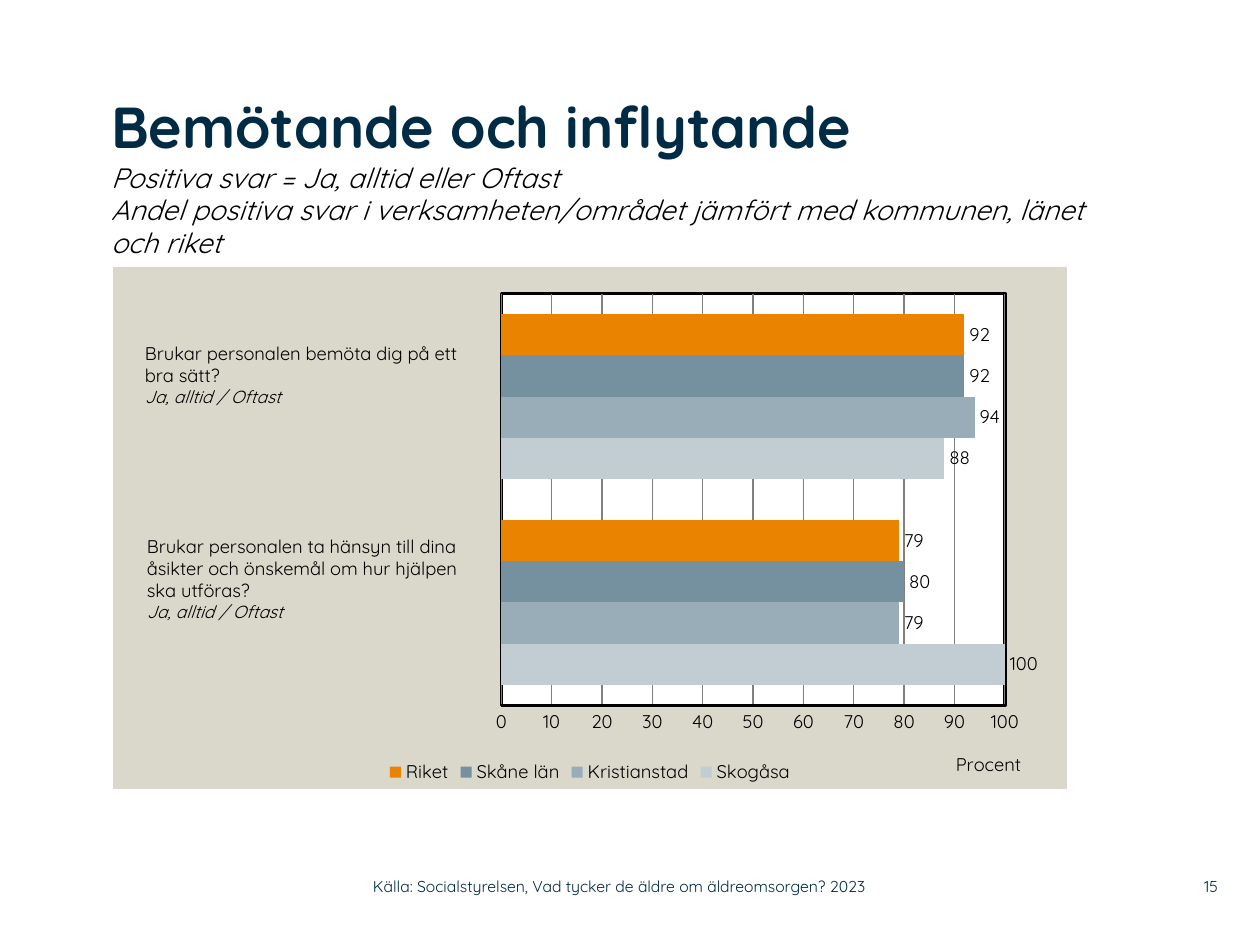
import dataclasses
import typing

import lxml.etree
import pptx
import pptx.chart.data
import pptx.dml.color
import pptx.enum.chart
import pptx.enum.text
import pptx.oxml
import pptx.oxml.ns
import pptx.util

SCALE = 914400 / 126
FONT = "Quicksand"
NAVY, BLACK, WHITE = "002B45", "000000", "FFFFFF"
NS = 'xmlns:c="{}" xmlns:a="{}"'.format(
    pptx.oxml.ns.nsuri("c"), pptx.oxml.ns.nsuri("a"))


@dataclasses.dataclass
class Line:
    text: str
    size: float
    color: str = BLACK
    bold: bool = False
    italic: bool = False


@dataclasses.dataclass
class TextBlock:
    box: tuple[int, int, int, int]
    lines: list[Line]
    inset: tuple[int, int] = (0, 0)
    spacing: float = 1.0
    anchor: typing.Any = pptx.enum.text.MSO_ANCHOR.TOP
    align: typing.Any = pptx.enum.text.PP_ALIGN.LEFT


@dataclasses.dataclass
class Series:
    name: str
    values: tuple[int, int]
    color: str


def px(n: int) -> int:
    return round(n * SCALE)


def rgb(color: str) -> pptx.dml.color.RGBColor:
    return pptx.dml.color.RGBColor.from_string(color)


def set_font(font, size: float, color: str = BLACK,
             bold: bool = False, italic: bool = False) -> None:
    values = {"name": FONT, "size": pptx.util.Pt(size),
              "bold": bold, "italic": italic}
    for key, value in values.items():
        setattr(font, key, value)
    font.color.rgb = rgb(color)


def add_text(s, block: TextBlock) -> None:
    tf = s.shapes.add_textbox(*map(px, block.box)).text_frame
    side, top = map(px, block.inset)
    values = {"word_wrap": True, "vertical_anchor": block.anchor,
              "margin_left": side, "margin_right": side,
              "margin_top": top, "margin_bottom": top}
    for key, value in values.items():
        setattr(tf, key, value)
    for i, line in enumerate(block.lines):
        p = tf.add_paragraph() if i else tf.paragraphs[0]
        p.alignment = block.align
        p.line_spacing = block.spacing
        r = p.add_run()
        r.text = line.text
        set_font(r.font, line.size, line.color, line.bold, line.italic)


def shape_format(color: str, line: str) -> lxml.etree._Element:
    return pptx.oxml.parse_xml(
        f'<c:spPr {NS}><a:solidFill><a:srgbClr val="{color}"/></a:solidFill>'
        f'{line}</c:spPr>')


def set_layout(parent, index: int, **values: typing.Any) -> None:
    old = parent.find(pptx.oxml.ns.qn("c:layout"))
    if old is not None:
        parent.remove(old)
    items = "".join(f'<c:{k} val="{v}"/>' for k, v in values.items())
    parent.insert(index, pptx.oxml.parse_xml(
        f"<c:layout {NS}><c:manualLayout>{items}</c:manualLayout></c:layout>"))


def add_bars(s, box: tuple[int, int, int, int], series: list[Series]) -> None:
    data = pptx.chart.data.CategoryChartData()
    data.categories = ["1", "2"]
    for item in series:
        data.add_series(item.name, item.values)
    chart = s.shapes.add_chart(
        pptx.enum.chart.XL_CHART_TYPE.BAR_CLUSTERED, *map(px, box), data).chart
    chart.has_title = False
    set_font(chart.font, 10.5)
    chart.has_legend = True
    chart.legend.position = pptx.enum.chart.XL_LEGEND_POSITION.BOTTOM
    chart.legend.include_in_layout = False
    set_font(chart.legend.font, 10.5)

    plot = chart.plots[0]
    for key, value in {"gap_width": 100, "overlap": 0,
                       "vary_by_categories": False}.items():
        setattr(plot, key, value)
    for bars, item in zip(plot.series, series):
        bars.format.fill.solid()
        bars.format.fill.fore_color.rgb = rgb(item.color)
        labels = bars.data_labels
        labels.show_value = True
        labels.position = pptx.enum.chart.XL_LABEL_POSITION.OUTSIDE_END
        set_font(labels.font, 10.5)

    chart.category_axis.visible = False
    axis = chart.value_axis
    no_tick = pptx.enum.chart.XL_TICK_MARK.NONE
    for key, value in {"minimum_scale": 0, "maximum_scale": 100,
                       "major_unit": 10, "has_major_gridlines": True,
                       "major_tick_mark": no_tick,
                       "minor_tick_mark": no_tick}.items():
        setattr(axis, key, value)
    set_font(axis.tick_labels.font, 10.5)
    for line, color, width in ((axis.format.line, BLACK, 2),
                               (axis.major_gridlines.format.line, "808080", 0.75)):
        line.color.rgb = rgb(color)
        line.width = pptx.util.Pt(width)
    title = axis.axis_title
    p = title.text_frame.paragraphs[0]
    r = p.add_run()
    r.text = "Procent"
    set_font(r.font, 10.5)
    set_layout(title._element, 1, xMode="edge", yMode="edge", x=0.88, y=0.92)

    chart_el = chart._chartSpace.chart
    area = chart_el.plotArea
    set_layout(area, 0, layoutTarget="inner", xMode="edge", yMode="edge",
               x=0.407, y=0.051, w=0.528, h=0.789)
    border = (f'<a:ln w="{pptx.util.Pt(2)}"><a:solidFill>'
              f'<a:srgbClr val="{BLACK}"/></a:solidFill></a:ln>')
    area.append(shape_format(WHITE, border))
    chart_el.addnext(shape_format("DAD7CB", "<a:ln><a:noFill/></a:ln>"))


def question(box: tuple[int, int, int, int], *lines: str) -> TextBlock:
    answer = Line("Ja, alltid / Oftast", 10, italic=True)
    return TextBlock(box, [Line(t, 10.5) for t in lines] + [answer], (13, 6))


def main() -> None:
    prs = pptx.Presentation()
    prs.slide_width, prs.slide_height = px(1260), px(945)
    s = prs.slides.add_slide(prs.slide_layouts[6])
    add_bars(s, (113, 267, 954, 522), [
        Series("Skogåsa", (100, 88), "C2CDD3"),
        Series("Kristianstad", (79, 94), "99ADB9"),
        Series("Skåne län", (80, 92), "75909F"),
        Series("Riket", (79, 92), "E98300"),
    ])
    middle = pptx.enum.text.MSO_ANCHOR.MIDDLE
    blocks = [
        TextBlock((111, 95, 1013, 151), [
            Line("Bemötande och inflytande", 33, NAVY, bold=True),
            Line("Positiva svar = Ja, alltid eller Oftast", 16, italic=True),
            Line("Andel positiva svar i verksamheten/området jämfört med "
                 "kommunen, länet och riket", 16, italic=True),
        ], spacing=0.97),
        question((132, 336, 374, 102),
                 "Brukar personalen bemöta dig på ett", "bra sätt?"),
        question((134, 529, 379, 123),
                 "Brukar personalen ta hänsyn till dina",
                 "åsikter och önskemål om hur hjälpen", "ska utföras?"),
        TextBlock((1159, 868, 59, 37), [Line("15", 9, NAVY)], anchor=middle,
                  align=pptx.enum.text.PP_ALIGN.RIGHT),
        TextBlock((373, 868, 558, 37), [
            Line("Källa: Socialstyrelsen, Vad tycker de äldre om "
                 "äldreomsorgen? 2023", 9, NAVY)], anchor=middle),
    ]
    for block in blocks:
        add_text(s, block)
    prs.save("out.pptx")


if __name__ == "__main__":
    main()
